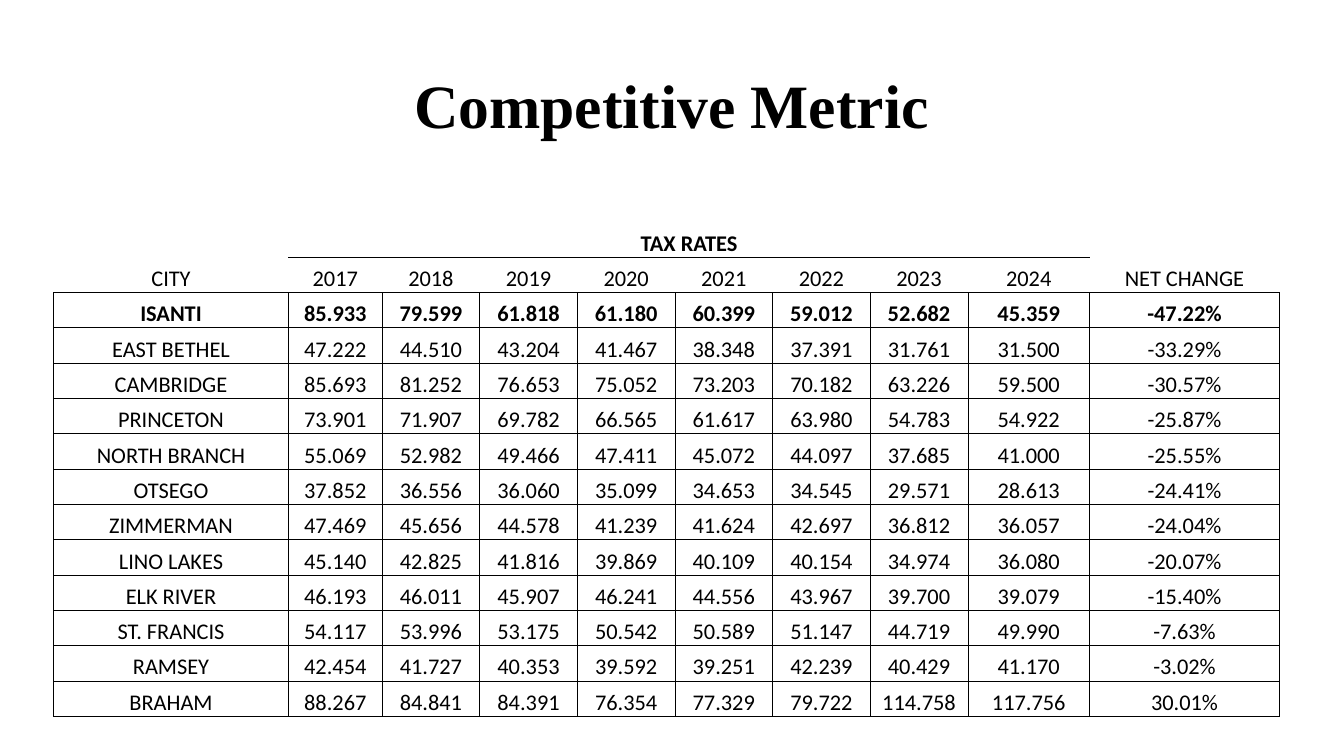
from lxml.etree import SubElement
from pptx import Presentation
from pptx.dml.color import RGBColor
from pptx.enum.text import MSO_ANCHOR, PP_ALIGN
from pptx.oxml.ns import qn
from pptx.util import Cm, Pt

BLACK = RGBColor(0x00, 0x00, 0x00)
HEADINGS = ["CITY", *map(str, range(2017, 2025)), "NET CHANGE"]
TAX_RATES = [
    "ISANTI|85.933|79.599|61.818|61.180|60.399|59.012|52.682|45.359|-47.22%",
    "EAST BETHEL|47.222|44.510|43.204|41.467|38.348|37.391|31.761|31.500|-33.29%",
    "CAMBRIDGE|85.693|81.252|76.653|75.052|73.203|70.182|63.226|59.500|-30.57%",
    "PRINCETON|73.901|71.907|69.782|66.565|61.617|63.980|54.783|54.922|-25.87%",
    "NORTH BRANCH|55.069|52.982|49.466|47.411|45.072|44.097|37.685|41.000|-25.55%",
    "OTSEGO|37.852|36.556|36.060|35.099|34.653|34.545|29.571|28.613|-24.41%",
    "ZIMMERMAN|47.469|45.656|44.578|41.239|41.624|42.697|36.812|36.057|-24.04%",
    "LINO LAKES|45.140|42.825|41.816|39.869|40.109|40.154|34.974|36.080|-20.07%",
    "ELK RIVER|46.193|46.011|45.907|46.241|44.556|43.967|39.700|39.079|-15.40%",
    "ST. FRANCIS|54.117|53.996|53.175|50.542|50.589|51.147|44.719|49.990|-7.63%",
    "RAMSEY|42.454|41.727|40.353|39.592|39.251|42.239|40.429|41.170|-3.02%",
    "BRAHAM|88.267|84.841|84.391|76.354|77.329|79.722|114.758|117.756|30.01%",
]
COLUMN_WIDTHS = [5.92, 2.36, *[2.46] * 6, 3.07, 4.78]
BANNER_HEIGHT, ROW_HEIGHT = 1.17, 0.89
LAST_YEAR = len(HEADINGS) - 2


def write_text(frame, text, *, font, size, bold=False, line_spacing=None):
    para = frame.paragraphs[0]
    para.alignment = PP_ALIGN.CENTER
    para.line_spacing = line_spacing
    span = para.add_run()
    span.text = text
    span.font.name = font
    span.font.size = Pt(size)
    span.font.bold = bold
    span.font.color.rgb = BLACK


def set_borders(cell, **widths):
    """Draw the sides named L, R, T, B in points; leave the others without a line."""
    properties = cell._tc.get_or_add_tcPr()
    for side in "LRTB":
        width = widths.get(side, 0)
        line = SubElement(properties, qn(f"a:ln{side}"), w=str(Pt(width)))
        if width:
            fill = SubElement(line, qn("a:solidFill"))
            SubElement(fill, qn("a:srgbClr"), val=str(BLACK))
        else:
            SubElement(line, qn("a:noFill"))


def border_widths(row, column):
    is_year = 1 <= column <= LAST_YEAR
    if row == 0:
        return {"B": 1} if is_year else {}
    if row == 1:
        return {"T": 1, "B": 0.5} if is_year else {"B": 0.5}
    return dict.fromkeys("LRTB", 0.5)


def fill_cell(cell, text, bold):
    cell.vertical_anchor = MSO_ANCHOR.BOTTOM
    cell.margin_left = cell.margin_right = cell.margin_top = Cm(0.02)
    cell.margin_bottom = 0
    write_text(cell.text_frame, text, font="Calibri", size=16, bold=bold)


def add_title(page, text):
    box = page.shapes.add_textbox(Cm(4.23), Cm(0.85), Cm(25.4), Cm(2.86))
    box.text_frame.word_wrap = True
    box.text_frame.vertical_anchor = MSO_ANCHOR.BOTTOM
    write_text(box.text_frame, text, font="Times New Roman", size=44, bold=True,
               line_spacing=0.9)


def add_rate_table(page):
    banner = ["", "TAX RATES"] + [""] * LAST_YEAR
    rows = [banner, HEADINGS, *(record.split("|") for record in TAX_RATES)]
    heights = [BANNER_HEIGHT] + [ROW_HEIGHT] * (len(rows) - 1)
    table = page.shapes.add_table(
        len(rows), len(HEADINGS), Cm(1.35), Cm(5.31),
        Cm(sum(COLUMN_WIDTHS)), Cm(sum(heights))).table
    table.first_row = table.horz_banding = False
    for column, width in zip(table.columns, COLUMN_WIDTHS):
        column.width = Cm(width)
    for row, height in zip(table.rows, heights):
        row.height = Cm(height)
    for row, values in enumerate(rows):
        for column, text in enumerate(values):
            cell = table.cell(row, column)
            set_borders(cell, **border_widths(row, column))
            cell.fill.background()
            if text:
                fill_cell(cell, text, bold=row in (0, 2))
    table.cell(0, 1).merge(table.cell(0, LAST_YEAR))


def main():
    deck = Presentation()
    deck.slide_width, deck.slide_height = Cm(33.87), Cm(19.05)
    page = deck.slides.add_slide(deck.slide_layouts[6])
    add_title(page, "Competitive Metric")
    add_rate_table(page)
    deck.save("out.pptx")


if __name__ == "__main__":
    main()
